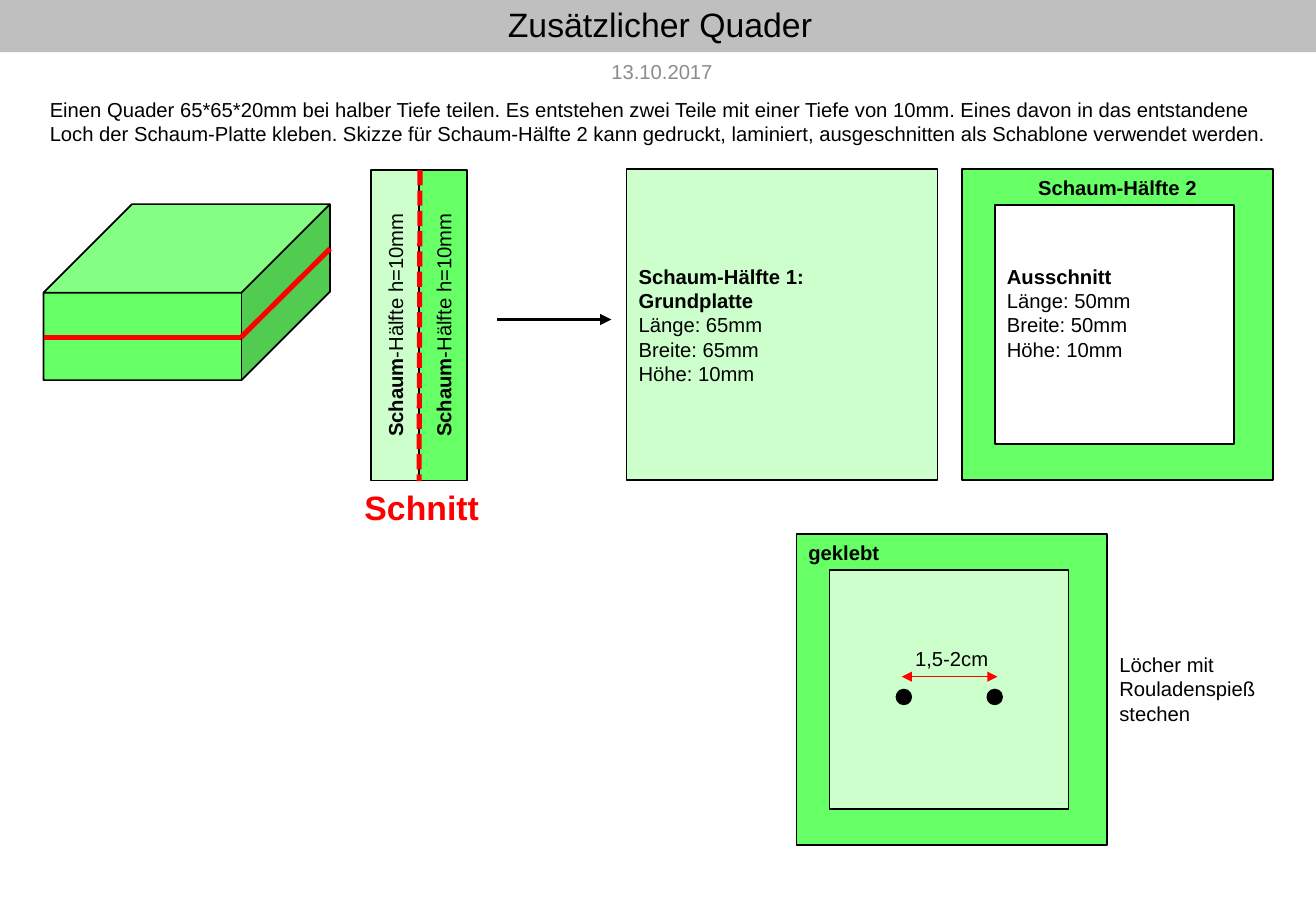
from dataclasses import dataclass

from lxml.etree import SubElement
from pptx import Presentation
from pptx.dml.color import RGBColor
from pptx.enum.dml import MSO_LINE as Dash
from pptx.enum.shapes import MSO_CONNECTOR as Link, MSO_SHAPE as Kind
from pptx.enum.text import MSO_ANCHOR as Anchor, MSO_AUTO_SIZE as Fit, PP_ALIGN as Align
from pptx.oxml.ns import qn
from pptx.util import Cm, Pt

BLACK = RGBColor(0x00, 0x00, 0x00)
WHITE = RGBColor(0xFF, 0xFF, 0xFF)
RED = RGBColor(0xFF, 0x00, 0x00)
GREEN = RGBColor(0x66, 0xFF, 0x66)
PALE = RGBColor(0xCC, 0xFF, 0xCC)
SILVER = RGBColor(0xBF, 0xBF, 0xBF)
GREY = RGBColor(0x8C, 0x8C, 0x8C)

SIDE, CUTOUT = 6.5, 5.0  # edge of a block half and of its opening
EDGE_X, EDGE_Y = 0.69, 0.75  # offset of the opening in its frame

Lines = list[list[tuple[str, bool]]]  # paragraphs of (text, bold) runs


def plain(*texts: str, bold: int = 0) -> Lines:
    """One run per paragraph; the first `bold` paragraphs are bold."""
    return [[(text, i < bold)] for i, text in enumerate(texts)]


@dataclass
class Style:
    size: float = 12
    color: RGBColor = BLACK
    align: Align = Align.LEFT
    anchor: Anchor = Anchor.MIDDLE
    wrap: bool = True
    space: float = 1.0
    bottom: float = 0.13


@dataclass
class Block:
    x: float
    y: float
    w: float
    h: float
    fill: RGBColor
    lines: Lines | None = None
    style: Style | None = None
    kind: Kind = Kind.RECTANGLE
    turn: float = 0


@dataclass
class Label:
    x: float
    y: float
    w: float
    h: float
    lines: Lines
    style: Style


@dataclass
class Stroke:
    x1: float
    y1: float
    x2: float
    y2: float
    color: RGBColor = RED
    width: float = 3
    dash: Dash | None = None
    ends: tuple[str, ...] = ()


def write(frame, lines: Lines, style: Style) -> None:
    form = {"word_wrap": style.wrap, "auto_size": Fit.NONE,
            "vertical_anchor": style.anchor, "margin_left": Cm(0.25),
            "margin_right": Cm(0.25), "margin_top": Cm(0.13),
            "margin_bottom": Cm(style.bottom)}
    for name, value in form.items():
        setattr(frame, name, value)
    for i, runs in enumerate(lines):
        para = frame.add_paragraph() if i else frame.paragraphs[0]
        form = {"alignment": style.align, "line_spacing": style.space,
                "space_before": Pt(0), "space_after": Pt(0)}
        for name, value in form.items():
            setattr(para, name, value)
        for text, bold in runs:
            run = para.add_run()
            run.text = text
            form = {"name": "Arial", "size": Pt(style.size), "bold": bold}
            for name, value in form.items():
                setattr(run.font, name, value)
            run.font.color.rgb = style.color


def place(shape, x: float, y: float, w: float, h: float) -> None:
    for name, value in {"left": x, "top": y, "width": w, "height": h}.items():
        setattr(shape, name, Cm(value))


def draw_block(slide, block: Block):
    shape = slide.shapes.add_shape(
        block.kind, *map(Cm, (block.x, block.y, block.w, block.h)))
    shape.shadow.inherit = False
    shape.rotation = block.turn
    shape.fill.solid()
    shape.fill.fore_color.rgb = block.fill
    shape.line.color.rgb = BLACK
    shape.line.width = Pt(1)
    if block.lines:
        write(shape.text_frame, block.lines, block.style or Style())
    return shape


def draw_label(slide, label: Label) -> None:
    box = slide.shapes.add_textbox(*map(Cm, (label.x, label.y, label.w, label.h)))
    write(box.text_frame, label.lines, label.style)


def draw_stroke(slide, stroke: Stroke) -> None:
    line = slide.shapes.add_connector(
        Link.STRAIGHT, *map(Cm, (stroke.x1, stroke.y1, stroke.x2, stroke.y2)))
    line.line.color.rgb = stroke.color
    line.line.width = Pt(stroke.width)
    if stroke.dash:
        line.line.dash_style = stroke.dash
    for end in stroke.ends:
        SubElement(line.line._get_or_add_ln(), qn(f"a:{end}"), type="triangle")
    SubElement(line._element.spPr, qn("a:effectLst"))


def draw_frame(slide, x: float, y: float, head: str, align: Align,
               fill: RGBColor, lines: Lines | None = None) -> None:
    """Green block half with a square opening."""
    top = Style(align=align, anchor=Anchor.TOP)
    draw_block(slide, Block(x, y, SIDE, SIDE, GREEN, plain(head, bold=1), top))
    draw_block(slide, Block(x + EDGE_X, y + EDGE_Y, CUTOUT, CUTOUT, fill,
                            lines, Style(bottom=0.63)))


def main() -> None:
    deck = Presentation()
    deck.slide_width, deck.slide_height = Cm(27.51), Cm(19.05)
    slide = deck.slides.add_slide(deck.slide_layouts[1])
    mid = Style(align=Align.CENTER)

    # Title, date and task
    title, body = slide.placeholders
    place(title, 0, 0, 27.6, 1.09)
    title.fill.solid()
    title.fill.fore_color.rgb = SILVER
    write(title.text_frame, plain("Zusätzlicher Quader"),
          Style(20, align=Align.CENTER, space=0.9))
    draw_label(slide, Label(12.19, 1.09, 3.3, 0.79, plain("13.10.2017"),
                            Style(color=GREY, align=Align.CENTER)))
    place(body, 0.79, 1.9, 26, 2)
    write(body.text_frame, plain(
        "Einen Quader 65*65*20mm bei halber Tiefe teilen. Es entstehen zwei Teile "
        "mit einer Tiefe von 10mm. Eines davon in das entstandene Loch der "
        "Schaum-Platte kleben. Skizze für Schaum-Hälfte 2 kann gedruckt, "
        "laminiert, ausgeschnitten als Schablone verwendet werden."),
        Style(anchor=Anchor.TOP))
    props = body.text_frame.paragraphs[0]._p.get_or_add_pPr()
    props.set("marL", "0")
    props.set("indent", "0")
    SubElement(props, qn("a:buNone"))

    # Block with its cutting line
    cube = draw_block(slide, Block(0.91, 4.27, 5.99, 3.68, GREEN, kind=Kind.CUBE))
    cube.adjustments[0] = 0.503
    draw_stroke(slide, Stroke(0.91, 7.06, 5.03, 7.06))
    draw_stroke(slide, Stroke(5.03, 7.06, 6.9, 5.2))

    # Side view of both halves
    side = [[("Schaum", True), ("-Hälfte h=10mm", False)]]
    for x, fill in ((6.02, GREEN), (5.01, PALE)):
        draw_block(slide, Block(x, 6.3, SIDE, 1, fill, side, mid, turn=270))
    draw_stroke(slide, Stroke(8.78, 3.56, 8.76, 10.06, dash=Dash.SQUARE_DOT))
    draw_label(slide, Label(7.37, 10.04, 2.92, 1.12, plain("Schnitt", bold=1),
                            Style(20, RED, anchor=Anchor.TOP, wrap=False)))

    # The two halves
    draw_stroke(slide, Stroke(10.39, 6.68, 12.78, 6.68, BLACK, 2.25, ends=("tailEnd",)))
    draw_block(slide, Block(13.1, 3.54, SIDE, SIDE, PALE, plain(
        "Schaum-Hälfte 1:", "Grundplatte", "Länge: 65mm", "Breite: 65mm",
        "Höhe: 10mm", bold=2)))
    draw_frame(slide, 20.11, 3.54, "Schaum-Hälfte 2", Align.CENTER, WHITE, plain(
        "Ausschnitt", "Länge: 50mm", "Breite: 50mm", "Höhe: 10mm", bold=1))

    # Glued block with holes
    draw_frame(slide, 16.65, 11.17, "geklebt", Align.LEFT, PALE)
    for x in (18.74, 20.64):
        draw_block(slide, Block(x, 14.42, 0.31, 0.31, BLACK, kind=Kind.OVAL))
    draw_stroke(slide, Stroke(18.85, 14.15, 20.85, 14.15, width=0.5,
                              ends=("headEnd", "tailEnd")))
    draw_label(slide, Label(18.84, 13.38, 2.11, 0.76, plain("1,5-2cm"), mid))
    draw_label(slide, Label(23.15, 13.51, 3.5, 1.8,
                            plain("Löcher mit Rouladenspieß stechen"),
                            Style(anchor=Anchor.TOP)))

    deck.save("out.pptx")


if __name__ == "__main__":
    main()
